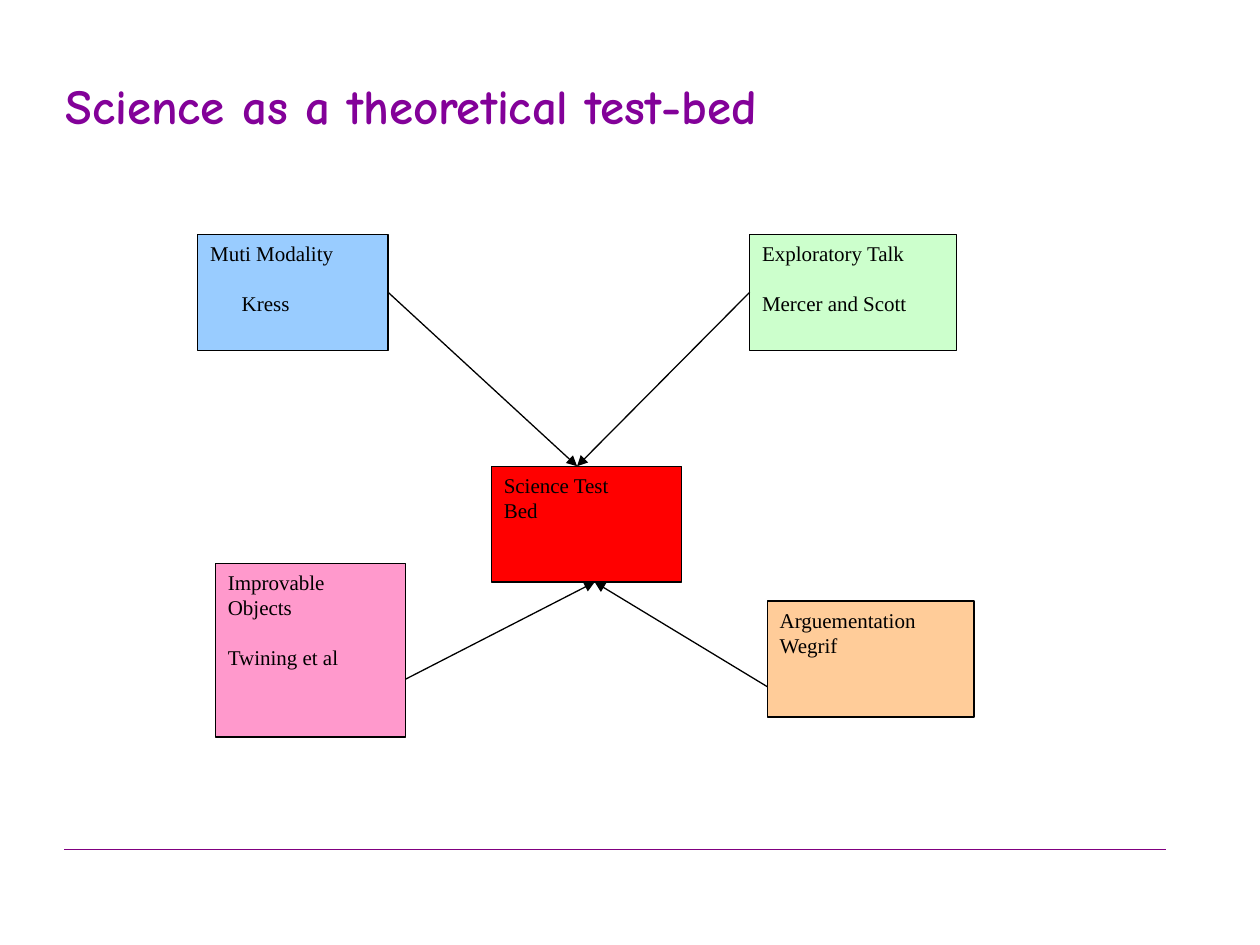
from lxml.etree import SubElement
from pptx import Presentation
from pptx.dml.color import RGBColor
from pptx.enum.shapes import MSO_CONNECTOR, MSO_SHAPE
from pptx.enum.text import MSO_ANCHOR, PP_ALIGN
from pptx.oxml.ns import qn
from pptx.util import Inches, Pt

THEME = {
    "title": {"name": "Comic Neue", "size": Pt(28), "bold": True, "color": "830199"},
    "body": {"name": "Times New Roman", "size": Pt(12), "color": "000000"},
    "outline": "000000",
    "rule": "800080",
    "line_width": Pt(0.75),
    "gap": Pt(14),
}

TITLE = "Science as a theoretical test-bed"
TITLE_AREA = (0.42, 0.33, 9, 1)
RULE = ((0.51, 6.74), (9.25, 6.74))

BOXES = {
    "modality": {"area": (1.57, 1.86, 1.51, 0.92), "fill": "99CCFF",
                 "lines": [("Muti Modality", {}),
                           ("Kress", {"space_before": THEME["gap"], "indent": 0.25})]},
    "talk": {"area": (5.95, 1.86, 1.64, 0.92), "fill": "CCFFCC",
             "lines": [("Exploratory Talk", {}),
                       ("Mercer and Scott", {"space_before": THEME["gap"]})]},
    "test bed": {"area": (3.9, 3.7, 1.51, 0.92), "fill": "FF0000",
                 "lines": [("Science Test\vBed", {})]},
    "objects": {"area": (1.71, 4.47, 1.51, 1.38), "fill": "FF99CC",
                "lines": [("Improvable\vObjects", {}),
                          ("Twining et al", {"space_before": THEME["gap"]})]},
    "argumentation": {"area": (6.09, 4.77, 1.64, 0.92), "fill": "FFCC99",
                      "lines": [("Arguementation", {}), ("Wegrif", {})]},
}

UPPER_TARGET, LOWER_TARGET = (4.58, 3.7), (4.72, 4.62)
RIGHT_SIDE, LEFT_SIDE = 3, 1
ARROWS = [
    ((3.22, 5.39), LOWER_TARGET, None),
    ((6.09, 5.45), LOWER_TARGET, None),
    ((3.08, 2.32), UPPER_TARGET, ("modality", RIGHT_SIDE)),
    ((5.95, 2.32), UPPER_TARGET, ("talk", LEFT_SIDE)),
]


def set_font(font, style):
    for attribute, value in style.items():
        if attribute == "color":
            font.color.rgb = RGBColor.from_string(value)
        else:
            setattr(font, attribute, value)


def add_box(slide, box):
    shape = slide.shapes.add_shape(MSO_SHAPE.RECTANGLE, *map(Inches, box["area"]))
    shape.shadow.inherit = False
    shape.fill.solid()
    shape.fill.fore_color.rgb = RGBColor.from_string(box["fill"])
    shape.line.color.rgb = RGBColor.from_string(THEME["outline"])
    shape.line.width = THEME["line_width"]
    frame = shape.text_frame
    frame.word_wrap = True
    frame.vertical_anchor = MSO_ANCHOR.TOP
    for index, (text, layout) in enumerate(box["lines"]):
        paragraph = frame.add_paragraph() if index else frame.paragraphs[0]
        paragraph.text = text
        paragraph.alignment = PP_ALIGN.LEFT
        if "space_before" in layout:
            paragraph.space_before = layout["space_before"]
        if "indent" in layout:
            paragraph._p.get_or_add_pPr().set("marL", str(Inches(layout["indent"])))
        set_font(paragraph.font, THEME["body"])
    return shape


def add_line(slide, start, end, color, arrow=False):
    connector = slide.shapes.add_connector(
        MSO_CONNECTOR.STRAIGHT, *map(Inches, (*start, *end)))
    connector.line.color.rgb = RGBColor.from_string(color)
    connector.line.width = THEME["line_width"]
    if arrow:
        SubElement(connector.line._get_or_add_ln(), qn("a:tailEnd"), type="triangle")
    SubElement(connector._element.spPr, qn("a:effectLst"))
    return connector


def add_title(slide):
    title = slide.shapes.title
    title.left, title.top, title.width, title.height = map(Inches, TITLE_AREA)
    title.text_frame.text = TITLE
    title.text_frame.vertical_anchor = MSO_ANCHOR.MIDDLE
    paragraph = title.text_frame.paragraphs[0]
    paragraph.alignment = PP_ALIGN.LEFT
    set_font(paragraph.runs[0].font, THEME["title"])


def main():
    presentation = Presentation()
    presentation.slide_width, presentation.slide_height = Inches(10), Inches(7.5)
    slide = presentation.slides.add_slide(presentation.slide_layouts[5])
    add_title(slide)
    add_line(slide, *RULE, THEME["rule"])

    shapes = {name: add_box(slide, box) for name, box in BOXES.items()}
    for start, end, joint in ARROWS:
        connector = add_line(slide, start, end, THEME["outline"], arrow=True)
        if joint:
            name, side = joint
            connector.begin_connect(shapes[name], side)

    presentation.save("out.pptx")


if __name__ == "__main__":
    main()
